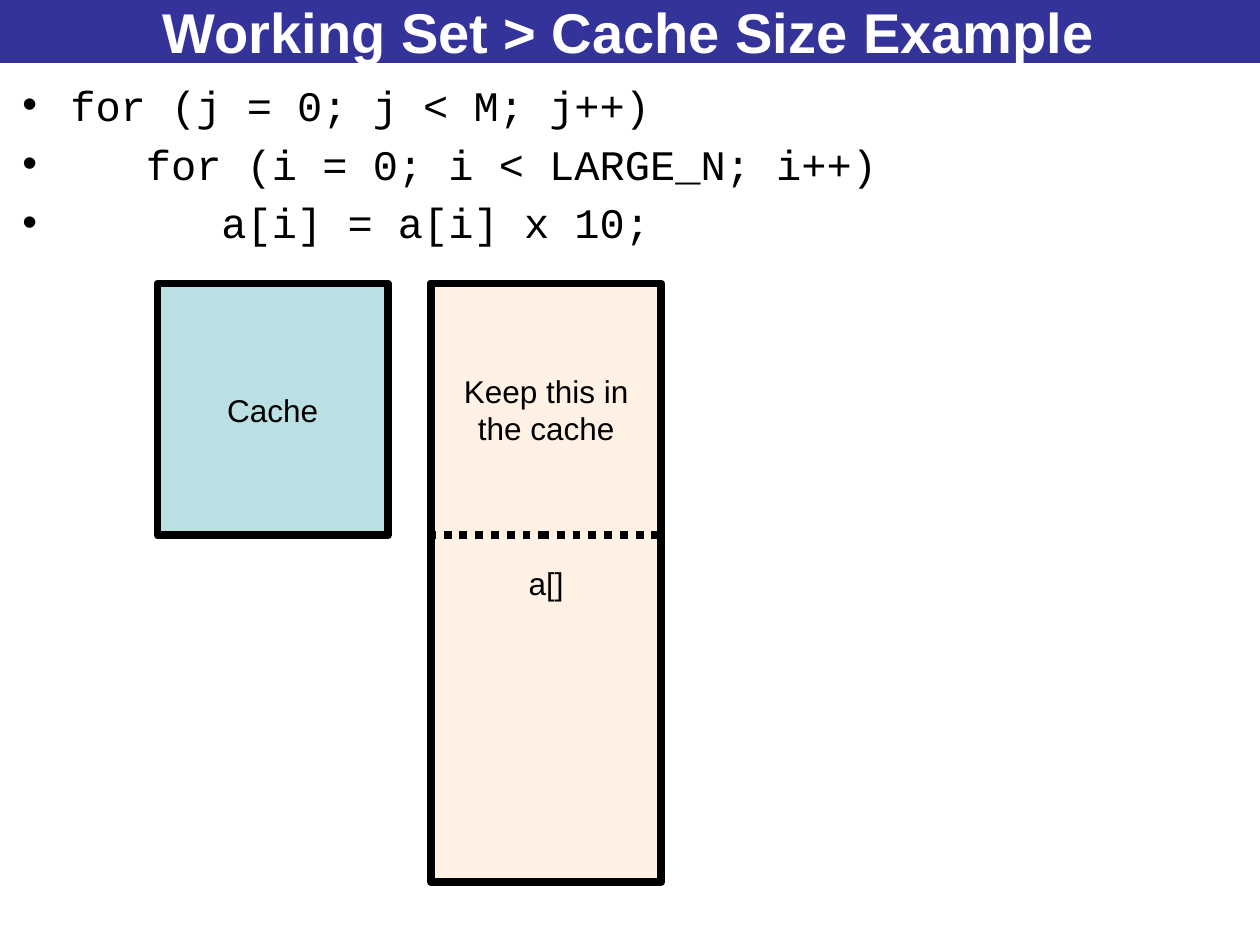
from dataclasses import dataclass

from lxml import etree
from pptx import Presentation
from pptx.dml.color import RGBColor
from pptx.enum.dml import MSO_LINE
from pptx.enum.shapes import MSO_SHAPE as Shape
from pptx.enum.text import MSO_ANCHOR as Anchor, PP_ALIGN as Align
from pptx.oxml.ns import qn
from pptx.util import Inches, Pt


@dataclass(frozen=True)
class Theme:
    banner: RGBColor = RGBColor(0x33, 0x33, 0x99)
    cache: RGBColor = RGBColor(0xBB, 0xE0, 0xE3)
    array: RGBColor = RGBColor(0xFF, 0xCC, 0x99)
    ink: RGBColor = RGBColor(0, 0, 0)
    light: RGBColor = RGBColor(0xFF, 0xFF, 0xFF)
    sans: str = "Arial"
    mono: str = "Courier New"
    title_size: int = 32
    code_size: int = 24
    label_size: int = 18
    outline: float = 4.5


THEME = Theme()
CODE = [  # nesting level, statement
    (0, "for (j = 0; j < M; j++)"),
    (1, "for (i = 0; i < LARGE_N; i++)"),
    (2, "a[i] = a[i] x 10;"),
]


def style_runs(paragraph, font_name, size, color, bold=False):
    for run in paragraph.runs:
        run.font.name = font_name
        run.font.size = Pt(size)
        run.font.color.rgb = color
        run.font.bold = bold


def add_block(slide, box, text, size, color, fill=None, bold=False):
    """Rectangle with a centred label; box is left, top, width, height in inches."""
    block = slide.shapes.add_shape(Shape.RECTANGLE, *map(Inches, box))
    block.shadow.inherit = False
    if fill is None:
        block.fill.background()
    else:
        block.fill.solid()
        block.fill.fore_color.rgb = fill
    block.line.fill.background()
    frame = block.text_frame
    frame.word_wrap = True
    frame.vertical_anchor = Anchor.MIDDLE
    frame.text = text
    frame.paragraphs[0].alignment = Align.CENTER
    style_runs(frame.paragraphs[0], THEME.sans, size, color, bold)
    return block


def add_title(slide, box):
    add_block(slide, box, "Working Set > Cache Size Example",
              THEME.title_size, THEME.light, THEME.banner, bold=True)


def add_bullet(paragraph, hang):
    """Bullet at the left edge, text hung by the given inches, 20% space before."""
    props = paragraph._p.get_or_add_pPr()
    props.set("marL", str(Inches(hang)))
    props.set("indent", str(-Inches(hang)))
    space = etree.SubElement(props, qn("a:spcBef"))
    etree.SubElement(space, qn("a:spcPct"), val="20000")
    etree.SubElement(props, qn("a:buFont"), typeface=THEME.sans)
    etree.SubElement(props, qn("a:buChar"), char="•")


def add_code(slide, box):
    base_hang, nest_step = 0.38, 0.6  # one nesting step is three code characters
    frame = slide.shapes.add_textbox(*map(Inches, box)).text_frame
    frame.word_wrap = True
    frame.text = "\n".join(statement for _, statement in CODE)
    for paragraph, (level, _) in zip(frame.paragraphs, CODE):
        add_bullet(paragraph, base_hang + level * nest_step)
        style_runs(paragraph, THEME.mono, THEME.code_size, THEME.ink)


def add_memory_block(slide, box, label, fill=None):
    block = add_block(slide, box, label, THEME.label_size, THEME.ink, fill)
    block.line.color.rgb = THEME.ink
    block.line.width = Pt(THEME.outline)
    return block


def add_memory_diagram(slide, box):
    left, top, width, height = box
    block_width, cache_height = 1.83, 2
    array_left = left + width - block_width

    # Cache beside the larger array
    add_memory_block(slide, (left, top, block_width, cache_height), "Cache", THEME.cache)
    array = add_memory_block(slide, (array_left, top, block_width, height), "a[]", THEME.array)
    tint = array.fill._xPr.find(qn("a:solidFill"))[0]
    etree.SubElement(tint, qn("a:alpha"), val="25000")

    # Part of the array that fits in the cache
    kept = add_memory_block(slide, (array_left, top, block_width, cache_height),
                            "Keep this in the cache")
    kept.line.dash_style = MSO_LINE.ROUND_DOT


def main():
    deck = Presentation()
    deck.slide_width, deck.slide_height = Inches(10), Inches(7.5)
    slide = deck.slides.add_slide(deck.slide_layouts[6])
    add_title(slide, (-0.02, 0, 10.02, 0.5))
    add_code(slide, (0.08, 0.58, 9.83, 6.67))
    add_memory_diagram(slide, (1.25, 2.25, 4, 4.75))
    deck.save("out.pptx")


if __name__ == "__main__":
    main()
